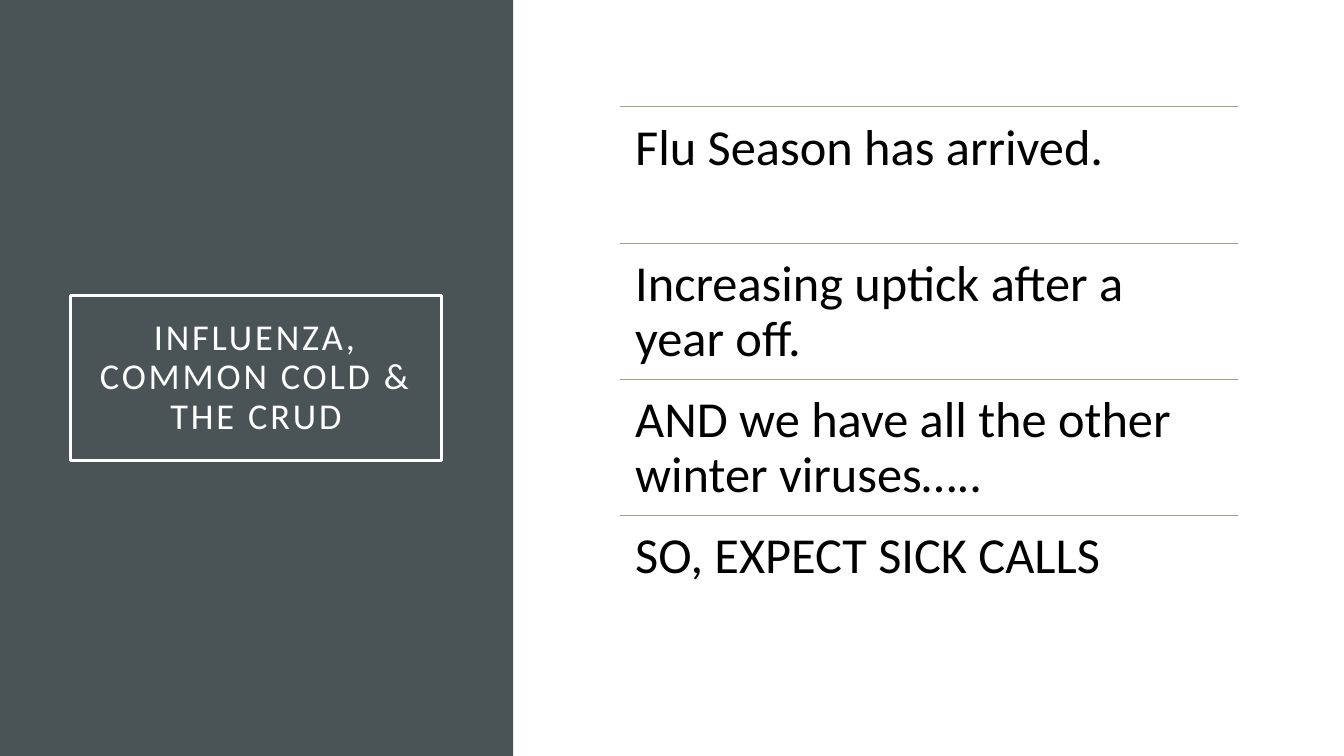
from pptx import Presentation
from pptx.dml.color import RGBColor
from pptx.enum.shapes import MSO_CONNECTOR as Conn, MSO_SHAPE as Shape
from pptx.enum.text import MSO_ANCHOR as Anchor, MSO_AUTO_SIZE as Auto, PP_ALIGN as Align
from pptx.oxml.ns import qn
from pptx.util import Inches, Pt
from lxml.etree import SubElement

SLATE = RGBColor(0x4A, 0x53, 0x56)
SAGE = RGBColor(0x9C, 0xA3, 0x83)
WHITE = RGBColor(0xFF, 0xFF, 0xFF)
BLACK = RGBColor(0, 0, 0)


def style(shape, text, size, color, inset, align, anchor):
    frame = shape.text_frame
    frame.text = text
    frame.word_wrap = True
    frame.auto_size = Auto.NONE
    frame.vertical_anchor = anchor
    frame.margin_left = frame.margin_right = Inches(inset)
    frame.margin_top = frame.margin_bottom = Inches(inset)
    par = frame.paragraphs[0]
    par.alignment = align
    par.line_spacing = 0.9
    font = par.runs[0].font
    font.name = "Calibri"
    font.size = Pt(size)
    font.color.rgb = color
    return par.runs[0]


prs = Presentation()
prs.slide_width = Inches(13.33)
prs.slide_height = Inches(7.5)
slide = prs.slides.add_slide(prs.slide_layouts[5])
shapes = slide.shapes
title = shapes.title

# Side panel, placed behind the title
panel = shapes.add_shape(Shape.RECTANGLE, 0, 0, Inches(5.09), prs.slide_height)
panel.shadow.inherit = False
panel.fill.solid()
panel.fill.fore_color.rgb = SLATE
panel.line.fill.background()
title.element.addprevious(panel.element)

# Framed title
title.left, title.top = Inches(0.7), Inches(2.93)
title.width, title.height = Inches(3.68), Inches(1.64)
title.line.color.rgb = WHITE
title.line.width = Pt(2.5)
run = style(title, "INFLUENZA, COMMON COLD & THE CRUD", 26, WHITE,
            0.2, Align.CENTER, Anchor.MIDDLE)
run.font._element.set("spc", "200")

# Ruled list of points
points = [
    "Flu Season has arrived.",
    "Increasing uptick after a year off.",
    "AND we have all the other winter viruses…..",
    "SO, EXPECT SICK CALLS",
]
left, width, pitch = Inches(6.15), Inches(6.13), Inches(1.35)
for i, point in enumerate(points):
    top = Inches(1.06) + i * pitch
    rule = shapes.add_connector(Conn.STRAIGHT, left, top, left + width, top)
    rule.line.color.rgb = SAGE
    rule.line.width = Pt(0.5)
    SubElement(rule.element.spPr, qn("a:effectLst"))
    box = shapes.add_textbox(left, top, width, pitch)
    style(box, point, 36, BLACK, 0.15, Align.LEFT, Anchor.TOP)

prs.save("out.pptx")
